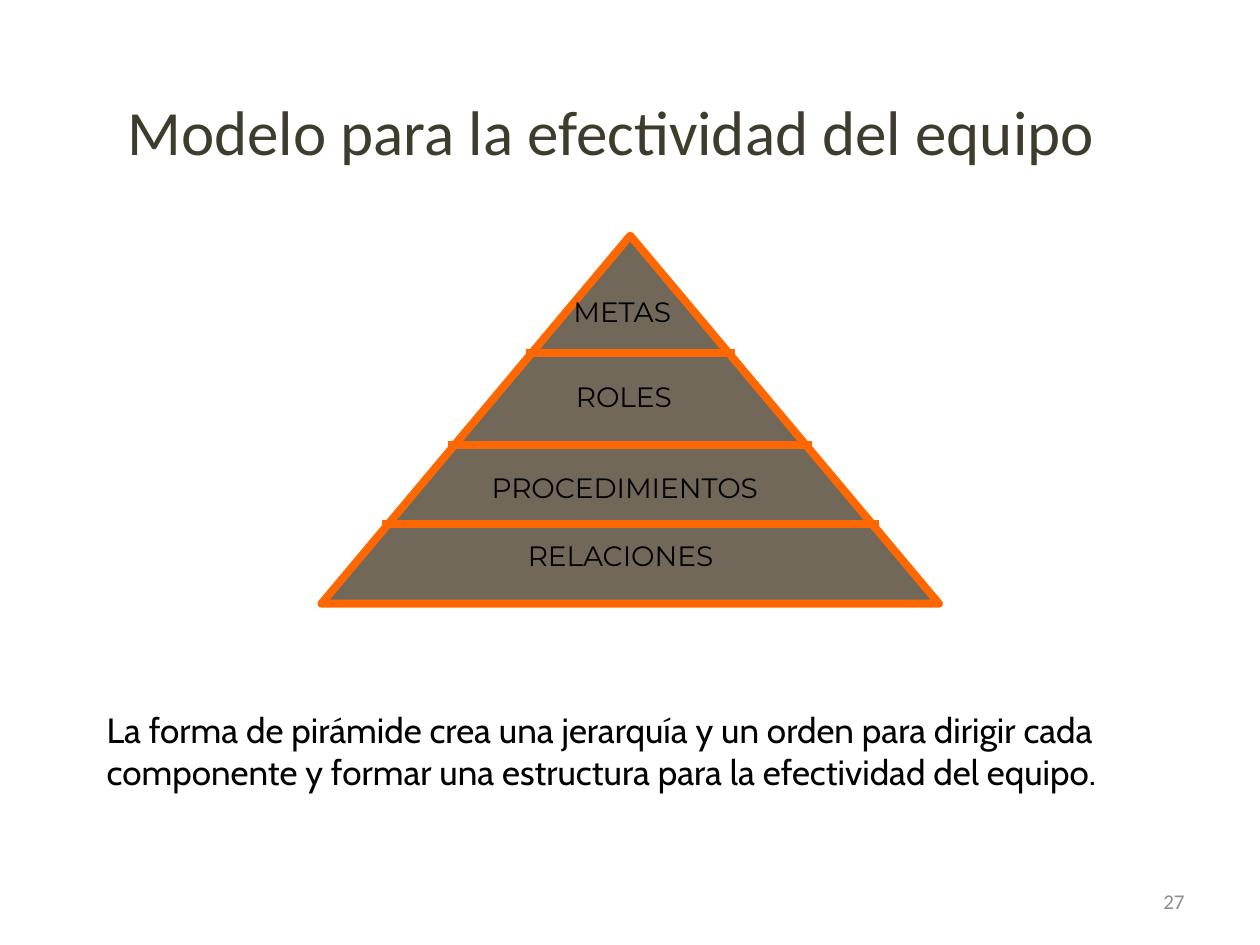
import dataclasses

import pptx
import pptx.dml.color
import pptx.enum.shapes
import pptx.enum.text
import pptx.oxml
import pptx.oxml.ns
import pptx.util
from pptx.util import Cm

ALIGN = pptx.enum.text.PP_ALIGN
ANCHOR = pptx.enum.text.MSO_ANCHOR


@dataclasses.dataclass(frozen=True)
class TextStyle:
    font: str
    size: int
    color: str


@dataclasses.dataclass(frozen=True)
class Theme:
    title: TextStyle = TextStyle("Calibri", 36, "3E3D2D")
    label: TextStyle = TextStyle("Montserrat", 16, "000000")
    body: TextStyle = TextStyle("Cabin", 20, "000000")
    number: TextStyle = TextStyle("Calibri", 12, "8C8C8C")
    fill: str = "71685A"
    edge: str = "FF6801"
    edge_width: float = 4.5


@dataclasses.dataclass(frozen=True)
class Box:
    left: float
    top: float
    width: float
    height: float

    def lengths(self):
        return [Cm(value) for value in dataclasses.astuple(self)]


THEME = Theme()
DIVIDERS = (2.36, 4.22, 5.82)
OVERHANG = 0.13
LABEL_HEIGHT = 0.94
LABELS = (
    ("METAS", 4.83, 1.07, 2.69),
    ("ROLES", 4.88, 2.77, 2.62),
    ("PROCEDIMIENTOS", 3.18, 4.62, 6.25),
    ("RELACIONES", 3.91, 5.99, 4.6),
)


def rgb(color):
    return pptx.dml.color.RGBColor.from_string(color)


def write(shape, text, style, align=ALIGN.LEFT, anchor=ANCHOR.TOP, wrap=True):
    frame = shape.text_frame
    frame.text = text
    frame.word_wrap = wrap
    frame.auto_size = pptx.enum.text.MSO_AUTO_SIZE.NONE
    frame.vertical_anchor = anchor
    para = frame.paragraphs[0]
    para.alignment = align
    para.font.name = style.font
    para.font.size = pptx.util.Pt(style.size)
    para.font.color.rgb = rgb(style.color)


def outline(shape):
    shape.line.color.rgb = rgb(THEME.edge)
    shape.line.width = pptx.util.Pt(THEME.edge_width)


def place_title(page, box, text):
    title = page.shapes.title
    title.left, title.top, title.width, title.height = box.lengths()
    write(title, text, THEME.title, ALIGN.CENTER)


def place_text(page, box, text, style, **layout):
    write(page.shapes.add_textbox(*box.lengths()), text, style, **layout)


def add_divider(group, box, drop):
    center = box.left + box.width / 2
    reach = box.width / 2 * drop / box.height + OVERHANG
    level = Cm(box.top + drop)
    divider = group.shapes.add_connector(
        pptx.enum.shapes.MSO_CONNECTOR.STRAIGHT,
        Cm(center - reach), level, Cm(center + reach), level,
    )
    outline(divider)
    properties = divider._element.spPr
    properties.append(pptx.oxml.parse_xml(
        f"<a:effectLst {pptx.oxml.ns.nsdecls('a')}/>"
    ))


def place_pyramid(page, box):
    group = page.shapes.add_group_shape()
    triangle = group.shapes.add_shape(
        pptx.enum.shapes.MSO_SHAPE.ISOSCELES_TRIANGLE, *box.lengths()
    )
    triangle.shadow.inherit = False
    triangle.fill.solid()
    triangle.fill.fore_color.rgb = rgb(THEME.fill)
    outline(triangle)
    for drop in reversed(DIVIDERS):
        add_divider(group, box, drop)
    for text, left, top, width in LABELS:
        label_box = Box(box.left + left, box.top + top, width, LABEL_HEIGHT)
        place_text(page, label_box, text, THEME.label, wrap=False)


def main():
    deck = pptx.Presentation()
    deck.slide_width, deck.slide_height = Cm(25.4), Cm(19.05)
    page = deck.slides.add_slide(deck.slide_layouts.get_by_name("Title Only"))
    place_pyramid(page, Box(6.48, 4.75, 12.45, 7.42))
    place_text(
        page, Box(1.9, 14.15, 22.48, 1.96),
        "La forma de pirámide crea una jerarquía y un orden para dirigir cada "
        "componente y formar una estructura para la efectividad del equipo.",
        THEME.body,
    )
    place_title(page, Box(1.52, 1.73, 21.59, 1), "Modelo para la efectividad del equipo")
    place_text(
        page, Box(18.21, 17.65, 5.92, 1.02), "27", THEME.number,
        align=ALIGN.RIGHT, anchor=ANCHOR.MIDDLE,
    )
    deck.save("out.pptx")


if __name__ == "__main__":
    main()
